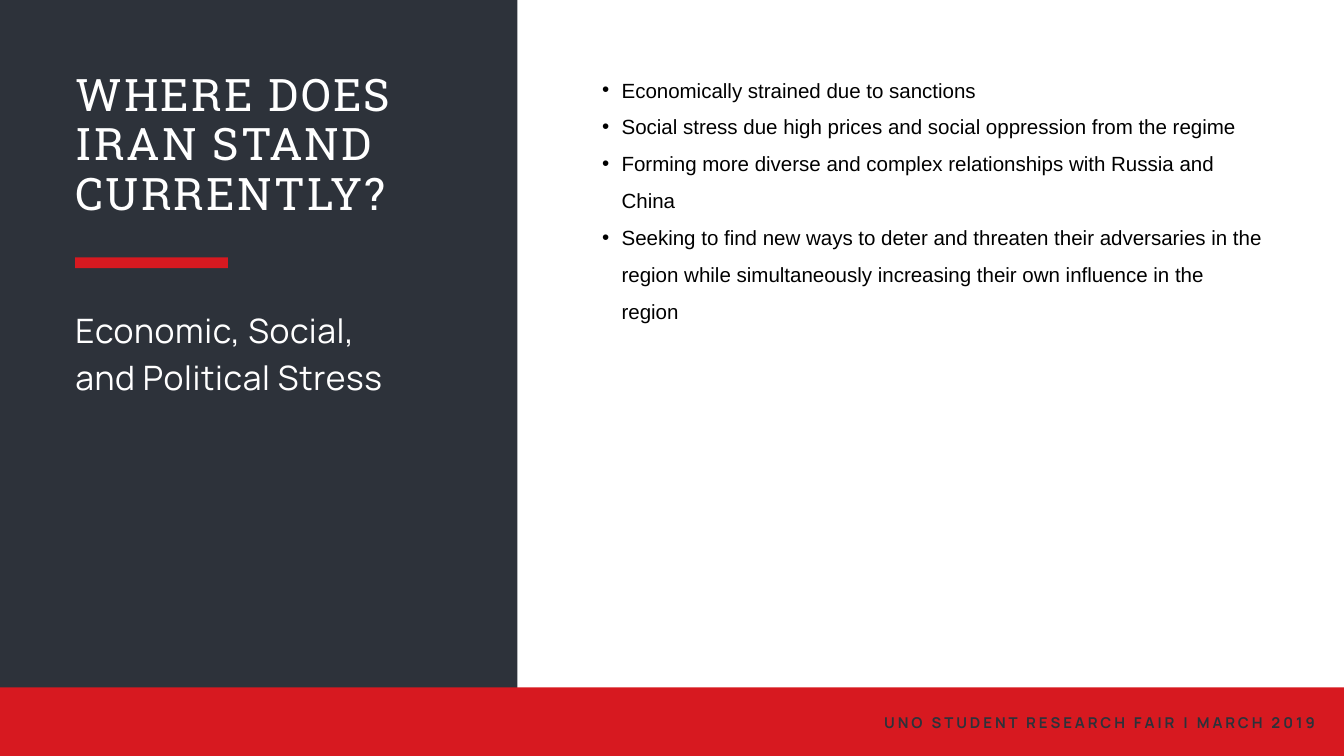
from dataclasses import dataclass

from lxml import etree
from pptx import Presentation
from pptx.dml.color import RGBColor
from pptx.enum.shapes import MSO_SHAPE
from pptx.enum.text import PP_ALIGN
from pptx.oxml.ns import qn
from pptx.util import Inches, Pt

RECTANGLE = MSO_SHAPE.RECTANGLE
LEFT, RIGHT = PP_ALIGN.LEFT, PP_ALIGN.RIGHT

COLUMNS, ROWS = 20, 11.25
CELL = Inches(1)
PANEL_WIDTH = 7.7
FOOTER_TOP = 10.23
MARGIN = 1.12
HANGING_INDENT = 0.29


@dataclass(frozen=True)
class Theme:
    paper: str = "FFFFFF"
    slate: str = "2D323A"
    red: str = "D71920"
    ink: str = "000000"
    heading_font: str = "Roboto Slab"
    label_font: str = "Manrope"
    body_font: str = "Arial"
    heading_size: float = 48
    subheading_size: float = 36
    body_size: float = 22
    footer_size: float = 16


THEME = Theme()

FINDINGS = [
    "Economically strained due to sanctions",
    "Social stress due high prices and social oppression from the regime",
    "Forming more diverse and complex relationships with Russia and China",
    "Seeking to find new ways to deter and threaten their adversaries in the region "
    "while simultaneously increasing their own influence in the region",
]


def place(column, row, columns, rows):
    return [round(cells * CELL) for cells in (column, row, columns, rows)]


def add_block(slide, area, color):
    block = slide.shapes.add_shape(RECTANGLE, *place(*area))
    block.shadow.inherit = False
    block.fill.solid()
    block.fill.fore_color.rgb = RGBColor.from_string(color)
    block.line.fill.background()


def add_bullet(paragraph):
    properties = paragraph._p.get_or_add_pPr()
    indent = round(HANGING_INDENT * CELL)
    properties.set("marL", str(indent))
    properties.set("indent", str(-indent))
    etree.SubElement(properties, qn("a:buFont")).set("typeface", THEME.body_font)
    etree.SubElement(properties, qn("a:buChar")).set("char", "•")


def add_text(slide, area, lines, *, font, size, color, leading,
             tracking=0, bold=False, align=LEFT, bulleted=False):
    frame = slide.shapes.add_textbox(*place(*area)).text_frame
    frame.word_wrap = True
    frame.margin_left = frame.margin_right = 0
    frame.margin_top = frame.margin_bottom = 0
    frame.text = "\n".join(lines)
    for paragraph in frame.paragraphs:
        paragraph.alignment = align
        paragraph.line_spacing = Pt(leading)
        if bulleted:
            add_bullet(paragraph)
        for run in paragraph.runs:
            run.font.name = font
            run.font.size = Pt(size)
            run.font.bold = bold
            run.font.color.rgb = RGBColor.from_string(color)
            run._r.get_or_add_rPr().set("spc", str(round(tracking * 100)))


def add_title_panel(slide):
    add_block(slide, (0, 0, PANEL_WIDTH, ROWS), THEME.slate)
    add_text(slide, (MARGIN, 4.51, 4.75, 1.37),
             ["Economic, Social, and Political Stress"],
             font=THEME.label_font, size=THEME.subheading_size,
             color=THEME.paper, leading=50.4, tracking=0.7)
    add_text(slide, (MARGIN, 1.06, 5.4, 2.32),
             ["WHERE DOES IRAN STAND CURRENTLY?"],
             font=THEME.heading_font, size=THEME.heading_size,
             color=THEME.paper, leading=52.8, tracking=2.4)
    add_block(slide, (MARGIN, 3.83, 2.27, 0.16), THEME.red)


def add_footer(slide):
    add_block(slide, (0, FOOTER_TOP, COLUMNS, ROWS - FOOTER_TOP), THEME.red)
    add_text(slide, (12.79, 10.58, 6.79, 0.29),
             ["UNO STUDENT RESEARCH FAIR | MARCH 2019"],
             font=THEME.label_font, size=THEME.footer_size, color=THEME.slate,
             leading=22.4, tracking=3.2, bold=True, align=RIGHT)


def add_findings(slide):
    add_text(slide, (8.96, 0.97, 9.85, 3.8), FINDINGS,
             font=THEME.body_font, size=THEME.body_size, color=THEME.ink,
             leading=39.6, bulleted=True)


def main():
    deck = Presentation()
    deck.slide_width, deck.slide_height = Inches(COLUMNS), Inches(ROWS)
    slide = deck.slides.add_slide(deck.slide_layouts[6])
    slide.background.fill.solid()
    slide.background.fill.fore_color.rgb = RGBColor.from_string(THEME.paper)
    add_title_panel(slide)
    add_footer(slide)
    add_findings(slide)
    deck.save("out.pptx")


if __name__ == "__main__":
    main()
